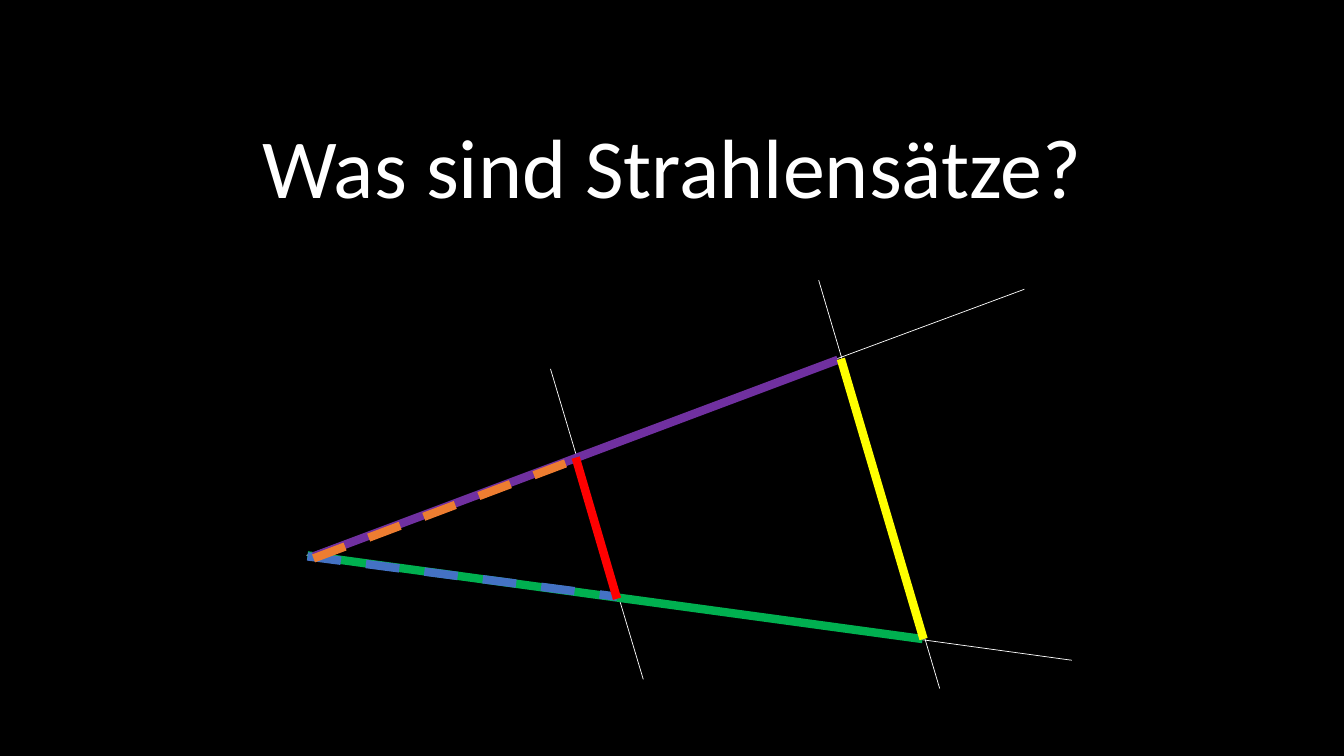
"""Builds a title slide with a diagram of the intercept theorem."""
import pptx
import pptx.util
import pptx.dml.color
import pptx.enum.dml
import pptx.enum.shapes
import pptx.enum.text
import pptx.oxml

PX = 9144
THEME = {
    "font": "Calibri", "title": 60, "thin": 0.5, "thick": 6,
    "black": "000000", "white": "FFFFFF", "green": "00B050",
    "blue": "4472C4", "purple": "7030A0", "orange": "ED7D31",
    "yellow": "FFFF00", "red": "FF0000",
}


def color(name):
    """Return the theme color with this name."""
    return pptx.dml.color.RGBColor.from_string(THEME[name])


deck = pptx.Presentation()
deck.slide_width, deck.slide_height = 1333 * PX, 750 * PX
slide = deck.slides.add_slide(deck.slide_layouts[5])
slide.background.fill.solid()
slide.background.fill.fore_color.rgb = color("black")

title = slide.shapes.title
title.left, title.top, title.width, title.height = (
    n * PX for n in (15, 16, 1303, 308))
frame = title.text_frame
frame.text = "Was sind Strahlensätze?"
frame.word_wrap = True
frame.auto_size = pptx.enum.text.MSO_AUTO_SIZE.NONE
frame.vertical_anchor = pptx.enum.text.MSO_ANCHOR.MIDDLE
para = frame.paragraphs[0]
para.alignment = pptx.enum.text.PP_ALIGN.CENTER
para.line_spacing = 0.9
font = para.runs[0].font
font.name = THEME["font"]
font.size = pptx.util.Pt(THEME["title"])
font.color.rgb = color("white")

lines = [
    (304, 551, 1016, 287, "white", "thin", False),
    (305, 551, 1063, 655, "white", "thin", False),
    (638, 674, 546, 366, "white", "thin", False),
    (932, 683, 812, 278, "white", "thin", False),
    (305, 551, 915, 634, "green", "thick", False),
    (305, 552, 612, 592, "blue", "thick", True),
    (311, 552, 831, 357, "purple", "thick", False),
    (311, 554, 576, 454, "orange", "thick", True),
    (834, 356, 916, 634, "yellow", "thick", False),
    (571, 454, 612, 594, "red", "thick", False),
]
group = slide.shapes.add_group_shape()
for *ends, hue, width, dashed in lines:
    line = group.shapes.add_connector(
        pptx.enum.shapes.MSO_CONNECTOR.STRAIGHT, *(n * PX for n in ends))
    line.line.color.rgb = color(hue)
    line.line.width = pptx.util.Pt(THEME[width])
    if dashed:
        line.line.dash_style = pptx.enum.dml.MSO_LINE.DASH
    line._element.spPr.append(pptx.oxml.parse_xml(
        '<a:effectLst xmlns:a='
        '"http://schemas.openxmlformats.org/drawingml/2006/main"/>'))

deck.save("out.pptx")
